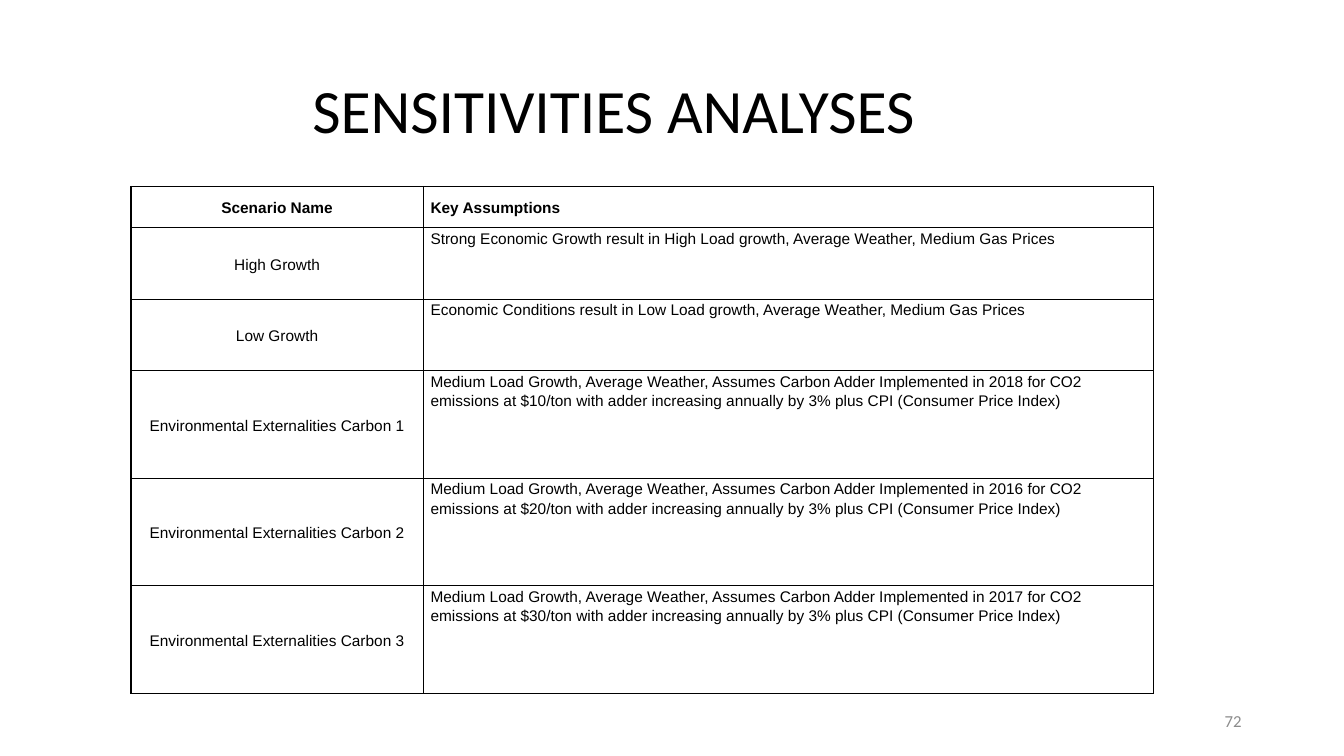
from lxml.etree import SubElement
from pptx import Presentation
from pptx.dml.color import RGBColor
from pptx.enum.text import MSO_ANCHOR, PP_ALIGN
from pptx.oxml.ns import qn
from pptx.util import Cm, Pt

BLACK = RGBColor(0x00, 0x00, 0x00)
WHITE = RGBColor(0xFF, 0xFF, 0xFF)
GREY = RGBColor(0x8C, 0x8C, 0x8C)

COLUMN_WIDTHS = (7.37, 18.39)
HEADER_HEIGHT, GROWTH_HEIGHT, CARBON_HEIGHT = 1.04, 1.8, 2.71
HEADINGS = ("Scenario Name", "Key Assumptions")
GROWTH_SCENARIOS = (
    ("High Growth", "Strong Economic Growth result in High Load growth, "
                    "Average Weather, Medium Gas Prices"),
    ("Low Growth", "Economic Conditions result in Low Load growth, "
                   "Average Weather, Medium Gas Prices"),
)
CARBON_ADDERS = ((2018, 10), (2016, 20), (2017, 30))


def carbon_scenario(number, year, price):
    """Return the name and assumptions of one carbon adder scenario."""
    return (
        f"Environmental Externalities Carbon {number}",
        "Medium Load Growth, Average Weather, Assumes Carbon Adder "
        f"Implemented in {year} for CO2 emissions at ${price}/ton with adder "
        "increasing annually by 3% plus CPI (Consumer Price Index)",
    )


def write(paragraph, words, font_name, size, color, align, bold=False):
    """Add one formatted run to an aligned paragraph."""
    paragraph.alignment = align
    run = paragraph.add_run()
    run.text = words
    run.font.name = font_name
    run.font.size = Pt(size)
    run.font.bold = bold
    run.font.color.rgb = color


def add_label(slide, box, words, size, color, align, line_spacing=1.0):
    """Add a vertically centred line of text in the given box."""
    frame = slide.shapes.add_textbox(*map(Cm, box)).text_frame
    frame.word_wrap = True
    frame.vertical_anchor = MSO_ANCHOR.MIDDLE
    paragraph = frame.paragraphs[0]
    paragraph.line_spacing = line_spacing
    write(paragraph, words, "Calibri", size, color, align)


def add_borders(cell):
    """Draw a thin black line on each side of a table cell."""
    properties = cell._tc.get_or_add_tcPr()
    for position, side in enumerate(("a:lnL", "a:lnR", "a:lnT", "a:lnB")):
        line = properties.makeelement(qn(side), {"w": str(Pt(1))})
        fill = SubElement(line, qn("a:solidFill"))
        SubElement(fill, qn("a:srgbClr"), val=str(BLACK))
        properties.insert(position, line)


def fill_cell(cell, words, align, anchor, bold):
    """Write and format one table cell."""
    cell.fill.solid()
    cell.fill.fore_color.rgb = WHITE
    cell.margin_left = cell.margin_right = Cm(0.18)
    cell.margin_top = cell.margin_bottom = 0
    cell.vertical_anchor = anchor
    paragraph = cell.text_frame.paragraphs[0]
    paragraph.line_spacing = 1.15
    paragraph.space_before = Pt(0.1)
    write(paragraph, words, "Arial", 11, BLACK, align, bold)
    add_borders(cell)


def add_scenario_table(slide, left, top):
    """Add the table of scenarios with its corner at the given point."""
    carbon_scenarios = [carbon_scenario(number, *adder)
                        for number, adder in enumerate(CARBON_ADDERS, 1)]
    rows = [HEADINGS, *GROWTH_SCENARIOS, *carbon_scenarios]
    heights = ([HEADER_HEIGHT] + [GROWTH_HEIGHT] * len(GROWTH_SCENARIOS)
               + [CARBON_HEIGHT] * len(carbon_scenarios))
    table = slide.shapes.add_table(
        len(rows), len(COLUMN_WIDTHS), Cm(left), Cm(top),
        Cm(sum(COLUMN_WIDTHS)), Cm(sum(heights))).table
    table.first_row = table.horz_banding = False
    for column, width in zip(table.columns, COLUMN_WIDTHS):
        column.width = Cm(width)
    for index, (scenario, assumptions) in enumerate(rows):
        table.rows[index].height = Cm(heights[index])
        heading = index == 0
        fill_cell(table.cell(index, 0), scenario, PP_ALIGN.CENTER,
                  MSO_ANCHOR.MIDDLE, heading)
        fill_cell(table.cell(index, 1), assumptions, PP_ALIGN.LEFT,
                  MSO_ANCHOR.MIDDLE if heading else MSO_ANCHOR.TOP, heading)


def main():
    """Build the sensitivities slide and save it."""
    deck = Presentation()
    deck.slide_width, deck.slide_height = Cm(33.87), Cm(19.05)
    slide = deck.slides.add_slide(deck.slide_layouts[6])
    add_label(slide, (7.62, 1.02, 16.31, 3.68), "SENSITIVITIES ANALYSES",
              44, BLACK, PP_ALIGN.LEFT, 0.9)
    add_scenario_table(slide, 3.3, 4.7)
    add_label(slide, (23.92, 17.65, 7.62, 1.02), "72",
              12, GREY, PP_ALIGN.RIGHT)
    deck.save("out.pptx")


if __name__ == "__main__":
    main()
